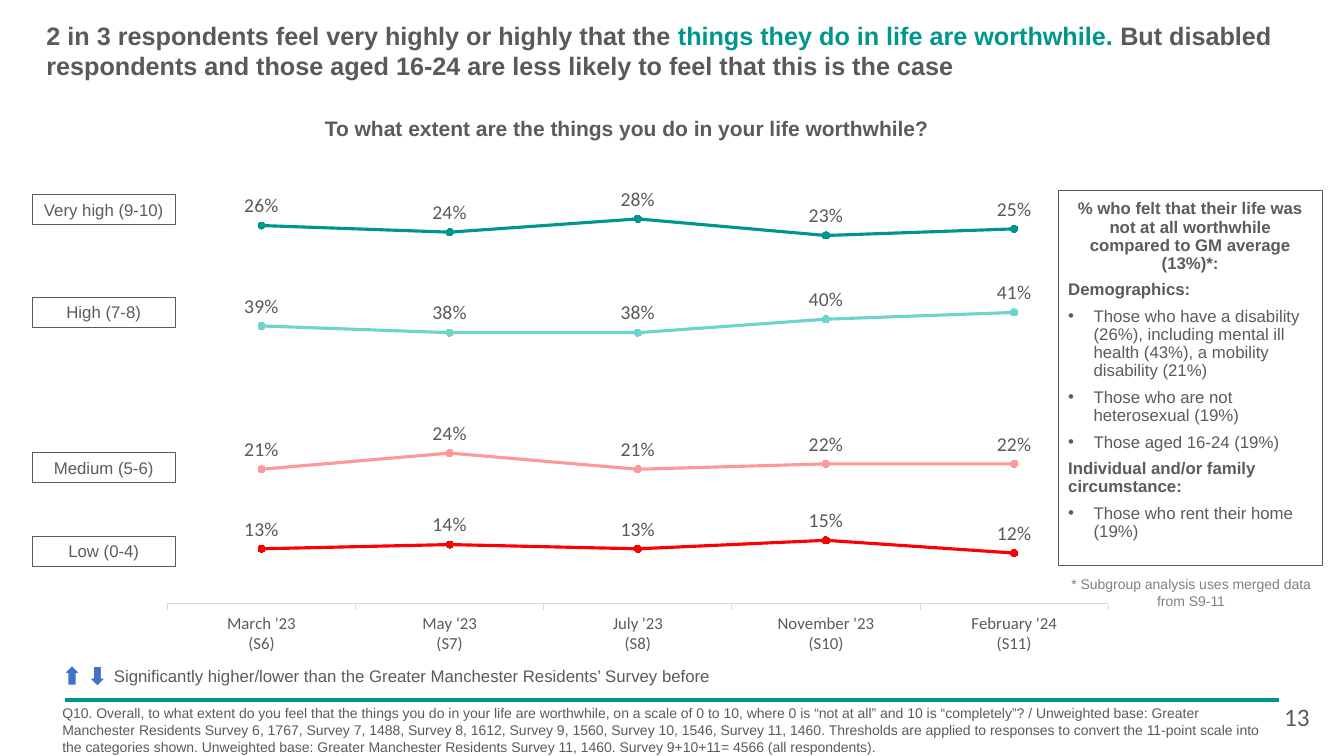
from dataclasses import dataclass

from lxml.etree import SubElement
from pptx import Presentation
from pptx.chart.data import CategoryChartData
from pptx.dml.color import RGBColor
from pptx.enum.chart import XL_CHART_TYPE as ChartType, XL_LABEL_POSITION as LabelPosition
from pptx.enum.chart import XL_MARKER_STYLE as MarkerStyle, XL_TICK_MARK as TickMark
from pptx.enum.shapes import MSO_CONNECTOR as Connector, MSO_SHAPE as Shape
from pptx.enum.text import MSO_ANCHOR as Anchor, MSO_AUTO_SIZE as AutoSize, PP_ALIGN as Align
from pptx.oxml import parse_xml
from pptx.oxml.ns import nsdecls, qn
from pptx.util import Cm, Pt


@dataclass(frozen=True)
class Theme:
    text: str = "5C5B5A"
    strong: str = "595959"
    muted: str = "808080"
    accent: str = "009690"
    arrow: str = "4472C4"
    axis: str = "D9D9D9"
    white: str = "FFFFFF"
    sans: str = "Arial"
    chart: str = "Calibri"
    title: int = 18
    subtitle: int = 15
    label: int = 14
    body: int = 12
    small: int = 10


THEME = Theme()

TITLE = [
    ("2 in 3 ", THEME.text),
    ("respondents feel very highly or highly that the ", THEME.strong),
    ("things they do in life are worthwhile. ", THEME.accent),
    ("But disabled respondents and those aged 16-24 are less likely to feel that this is the case",
     THEME.strong),
]
SUBTITLE = "To what extent are the things you do in your life worthwhile?"
FINDINGS = [
    ("lead", "% who felt that their life was not at all worthwhile compared to GM average (13%)*:"),
    ("heading", "Demographics:"),
    ("bullet", "Those who have a disability (26%), including mental ill health (43%), "
               "a mobility disability (21%)"),
    ("bullet", "Those who are not heterosexual (19%)"),
    ("bullet", "Those aged 16-24 (19%)"),
    ("heading", "Individual and/or family circumstance:"),
    ("bullet", "Those who rent their home (19%)"),
]
SUBGROUP_NOTE = "* Subgroup analysis uses merged data from S9-11"
SIGNIFICANCE = "Significantly higher/lower than the Greater Manchester Residents’ Survey before"
BASE_NOTE = (
    "Q10. Overall, to what extent do you feel that the things you do in your life are worthwhile, "
    "on a scale of 0 to 10, where 0 is “not at all” and 10 is “completely”? / Unweighted base: "
    "Greater Manchester Residents Survey 6, 1767, Survey 7, 1488, Survey 8, 1612, Survey 9, 1560, "
    "Survey 10, 1546, Survey 11, 1460. Thresholds are applied to responses to convert the 11-point "
    "scale into the categories shown. Unweighted base: Greater Manchester Residents Survey 11, 1460. "
    "Survey 9+10+11= 4566 (all respondents)."
)
PAGE_NUMBER = "13"
WAVES = ["March '23\n(S6)", "May '23\n(S7)", "July '23\n(S8)", "November '23\n(S10)",
         "February '24\n(S11)"]

PLOT_LEFT, PLOT_WIDTH = 4.22, 23.71
LABEL_LEFT, LABEL_WIDTH, LABEL_HEIGHT = 0.81, 3.61, 0.76
# fields: label, label top, values, colour, axis range, frame, plot top and height
BANDS = [
    ("Low (0-4)", 13.51, (0.13, 0.14, 0.13, 0.15, 0.12), "FF0000", (0, 0.16),
     (1.83, 12.04, 31.83, 5.79), (13.51, 1.71)),
    ("Medium (5-6)", 11.4, (0.21, 0.24, 0.21, 0.22, 0.22), "FF9999", (0.195, 0.245),
     (1.83, 9.58, 31.83, 4.45), (11.35, 0.68)),
    ("High (7-8)", 7.49, (0.39, 0.38, 0.38, 0.4, 0.41), "6DD5CE", (0.365, 0.415),
     (1.83, 6.2, 31.83, 4.45), (7.79, 0.85)),
    ("Very high (9-10)", 4.9, (0.26, 0.24, 0.28, 0.23, 0.25), THEME.accent, (0, 0.3),
     (2.03, 4.57, 31.83, 4.45), (5.35, 2.51)),
]
ARROWS = [(1.6, 16.76, 180), (2.24, 16.79, 0)]


def rgb(colour):
    return RGBColor.from_string(colour)


def style(font, size, colour=THEME.text, bold=False, name=THEME.sans):
    font.size, font.bold, font.name = Pt(size), bold, name
    font.color.rgb = rgb(colour)


def place(shape, left, top, width, height):
    shape.left, shape.top, shape.width, shape.height = Cm(left), Cm(top), Cm(width), Cm(height)


def write(shape, text, size, align=Align.LEFT, **font):
    shape.text_frame.text = text
    paragraph = shape.text_frame.paragraphs[0]
    paragraph.alignment = align
    style(paragraph.runs[0].font, size, **font)


def add_text(slide, box, text, size, wrap=True, **options):
    shape = slide.shapes.add_textbox(*map(Cm, box))
    shape.text_frame.word_wrap = wrap
    write(shape, text, size, **options)


def add_preset(slide, kind, box, line, width, fill=None):
    shape = slide.shapes.add_shape(kind, *map(Cm, box))
    shape.shadow.inherit = False
    if fill:
        shape.fill.solid()
        shape.fill.fore_color.rgb = rgb(fill)
    else:
        shape.fill.background()
    shape.line.color.rgb, shape.line.width = rgb(line), Pt(width)
    return shape


def fill_title(title):
    place(title, 1.17, 0.51, 31.34, 1.55)
    frame = title.text_frame
    frame.auto_size, frame.word_wrap, frame.vertical_anchor = AutoSize.NONE, True, Anchor.TOP
    frame.margin_left = frame.margin_right = frame.margin_top = frame.margin_bottom = 0
    paragraph = frame.paragraphs[0]
    paragraph.alignment = Align.LEFT
    for text, colour in TITLE:
        run = paragraph.add_run()
        run.text = text
        style(run.font, THEME.title, colour, bold=True)


def fill_findings(body):
    place(body, 26.67, 4.8, 6.65, 9.45)
    body.fill.solid()
    body.fill.fore_color.rgb = rgb(THEME.white)
    body.line.color.rgb, body.line.width = rgb(THEME.text), Pt(0.75)
    frame = body.text_frame
    frame.auto_size, frame.word_wrap, frame.vertical_anchor = AutoSize.NONE, True, Anchor.TOP
    frame.margin_left = frame.margin_right = frame.margin_top = frame.margin_bottom = Cm(0.25)
    frame.text = "\n".join(text for _, text in FINDINGS)
    for index, (paragraph, (kind, _)) in enumerate(zip(frame.paragraphs, FINDINGS)):
        bullet = kind == "bullet"
        indent = Cm(0.64) if bullet else 0
        properties = paragraph._p.get_or_add_pPr()
        properties.set("marL", str(indent))
        properties.set("indent", str(-indent))
        if bullet:
            SubElement(properties, qn("a:buChar")).set("char", "•")
        else:
            SubElement(properties, qn("a:buNone"))
        paragraph.alignment = Align.CENTER if kind == "lead" else Align.LEFT
        paragraph.line_spacing = 0.9
        paragraph.space_before, paragraph.space_after = Pt(3 if index else 0), Pt(3)
        style(paragraph.runs[0].font, THEME.body, bold=not bullet)


def set_plot_area(chart, frame, plot):
    left, top, width, height = frame
    shares = {"x": (PLOT_LEFT - left) / width, "y": (plot[0] - top) / height,
              "w": PLOT_WIDTH / width, "h": plot[1] / height}
    sizes = "".join(f'<c:{side} val="{share:.4f}"/>' for side, share in shares.items())
    area = chart.element.find(".//" + qn("c:plotArea"))
    for layout in area.findall(qn("c:layout")):
        area.remove(layout)
    area.insert(0, parse_xml(
        f'<c:layout {nsdecls("c")}><c:manualLayout><c:layoutTarget val="inner"/>'
        f'<c:xMode val="edge"/><c:yMode val="edge"/>{sizes}</c:manualLayout></c:layout>'))
    clear = (f'<c:spPr {nsdecls("c", "a")}><a:noFill/><a:ln><a:noFill/></a:ln></c:spPr>')
    area.append(parse_xml(clear))
    chart.element.find(qn("c:chart")).addnext(parse_xml(clear))


def add_band_chart(slide, values, colour, limits, frame, plot, show_waves):
    data = CategoryChartData(number_format="0%")
    data.categories = WAVES
    data.add_series("Series 1", values)
    chart = slide.shapes.add_chart(ChartType.LINE_MARKERS_STACKED, *map(Cm, frame), data).chart
    style(chart.font, THEME.body, name=THEME.chart)
    chart.has_legend = chart.has_title = False
    value_axis, wave_axis = chart.value_axis, chart.category_axis
    value_axis.minimum_scale, value_axis.maximum_scale = limits
    value_axis.has_major_gridlines = value_axis.visible = False
    wave_axis.visible = show_waves
    wave_axis.major_tick_mark = TickMark.OUTSIDE
    wave_axis.format.line.color.rgb, wave_axis.format.line.width = rgb(THEME.axis), Pt(0.75)
    chart.plots[0].vary_by_categories = False
    series = chart.plots[0].series[0]
    series.smooth = False
    series.format.line.color.rgb, series.format.line.width = rgb(colour), Pt(2.25)
    series.marker.style, series.marker.size = MarkerStyle.CIRCLE, 5
    series.marker.format.fill.solid()
    series.marker.format.fill.fore_color.rgb = rgb(colour)
    series.marker.format.line.color.rgb = rgb(colour)
    labels = series.data_labels
    labels.show_value, labels.position = True, LabelPosition.ABOVE
    labels.number_format, labels.number_format_is_linked = "0%", False
    style(labels.font, THEME.label, THEME.strong, name=THEME.chart)
    set_plot_area(chart, frame, plot)


def main():
    """Build the worthwhile-life survey slide."""
    presentation = Presentation()
    presentation.slide_width, presentation.slide_height = Cm(33.87), Cm(19.05)
    slide = presentation.slides.add_slide(presentation.slide_layouts[1])
    rule = slide.shapes.add_connector(Connector.STRAIGHT, Cm(1.63), Cm(17.63), Cm(32.23), Cm(17.63))
    rule.line.color.rgb, rule.line.width = rgb(THEME.accent), Pt(3)
    SubElement(rule.element.spPr, qn("a:effectLst"))
    fill_title(slide.shapes.title)
    fill_findings(slide.placeholders[1])
    add_text(slide, (6.6, 2.79, 18.39, 0.89), SUBTITLE, THEME.subtitle, align=Align.CENTER, bold=True)
    add_text(slide, (26.42, 14.38, 7.19, 1.12), SUBGROUP_NOTE, THEME.small, align=Align.CENTER,
             colour=THEME.muted)
    for label, top, values, colour, limits, frame, plot in BANDS:
        box = add_preset(slide, Shape.RECTANGLE, (LABEL_LEFT, top, LABEL_WIDTH, LABEL_HEIGHT),
                         THEME.text, 0.75)
        write(box, label, THEME.body, align=Align.CENTER)
        add_band_chart(slide, values, colour, limits, frame, plot, label == BANDS[0][0])
    for left, top, rotation in ARROWS:
        arrow = add_preset(slide, Shape.DOWN_ARROW, (left, top, 0.43, 0.51), THEME.white, 1, THEME.arrow)
        arrow.rotation = rotation
    add_text(slide, (2.62, 16.66, 15.6, 0.76), SIGNIFICANCE, THEME.body, wrap=False)
    add_text(slide, (1.32, 17.63, 31.06, 1.42), BASE_NOTE, THEME.small)
    add_text(slide, (32.11, 17.55, 1.35, 1.02), PAGE_NUMBER, THEME.title, name=THEME.chart)
    presentation.save("out.pptx")


if __name__ == "__main__":
    main()
